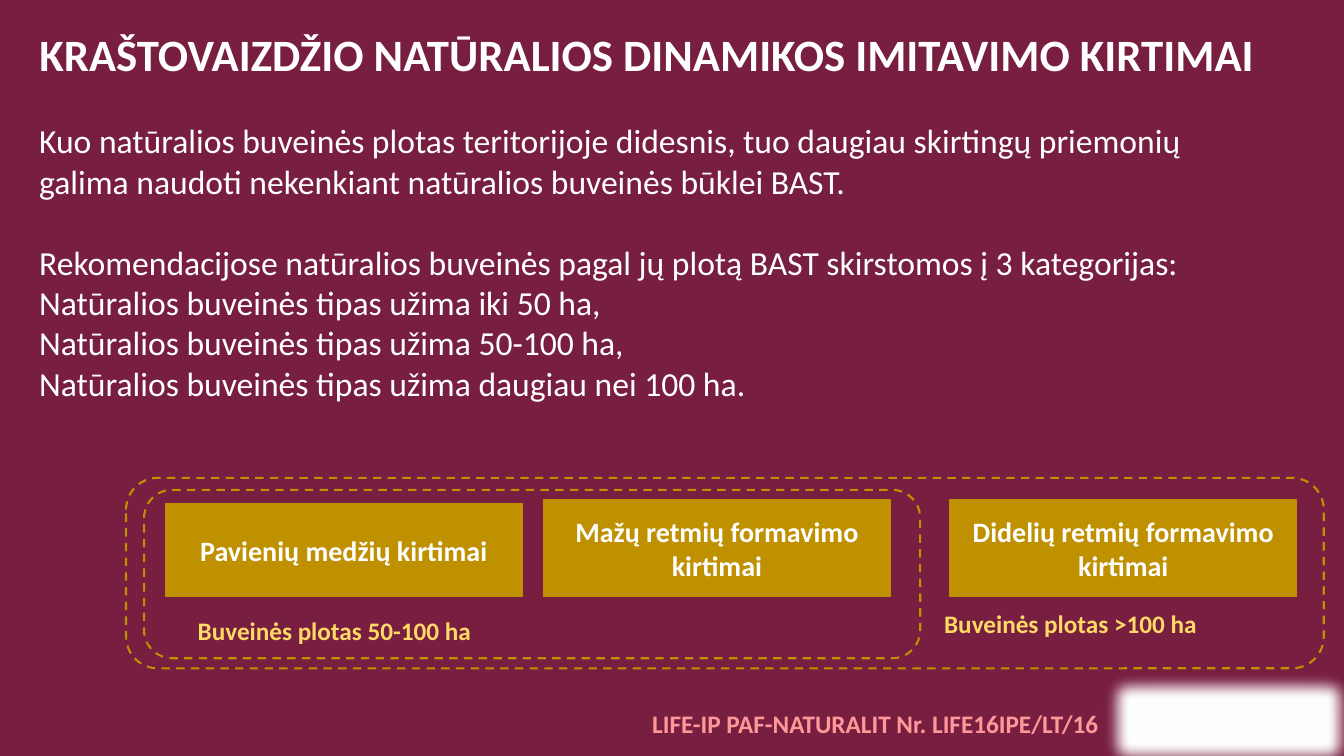
from collections import namedtuple

from lxml import etree
from pptx import Presentation
from pptx.dml.color import RGBColor
from pptx.enum.dml import MSO_LINE
from pptx.enum.shapes import MSO_SHAPE
from pptx.enum.text import MSO_ANCHOR, PP_ALIGN
from pptx.oxml.ns import qn
from pptx.util import Inches, Pt

RECTANGLE, ROUNDED = MSO_SHAPE.RECTANGLE, MSO_SHAPE.ROUNDED_RECTANGLE
MIDDLE = MSO_ANCHOR.MIDDLE
LEFT, CENTER = PP_ALIGN.LEFT, PP_ALIGN.CENTER
DASH = MSO_LINE.DASH

FONT = "Calibri"
WINE, WHITE, GOLD, YELLOW, PINK = "781E40", "FFFFFF", "BF9000", "FFD966", "FF9999"

TITLE = "KRAŠTOVAIZDŽIO NATŪRALIOS DINAMIKOS IMITAVIMO KIRTIMAI"
INTRO = [
    "Kuo natūralios buveinės plotas teritorijoje didesnis, tuo daugiau skirtingų "
    "priemonių galima naudoti nekenkiant natūralios buveinės būklei BAST.",
    "Rekomendacijose natūralios buveinės pagal jų plotą BAST skirstomos į 3 kategorijas:",
    "Natūralios buveinės tipas užima iki 50 ha,",
    "Natūralios buveinės tipas užima 50-100 ha,",
    "Natūralios buveinės tipas užima daugiau nei 100 ha.",
]
FELLINGS = [
    ("Pavienių medžių kirtimai", (3.28, 13.5, 29.8, 49)),
    ("Mažų retmių formavimo kirtimai", (34.85, 11.64, 28.96, 50.8)),
    ("Didelių retmių formavimo kirtimai", (68.77, 11.64, 28.96, 50.8)),
]
PROJECT = "LIFE-IP PAF-NATURALIT Nr. LIFE16IPE/LT/16"

Box = namedtuple("Box", "left top width height")


def colour(value):
    """Turn a hex string into a colour."""
    return RGBColor.from_string(value)


def part(box, left, top, width, height):
    """Return the area given in percent of a box."""
    return Box(
        round(box.left + box.width * left / 100),
        round(box.top + box.height * top / 100),
        round(box.width * width / 100),
        round(box.height * height / 100),
    )


def write(frame, lines, size, tint, bold=False, align=LEFT):
    """Fill a text frame with evenly formatted paragraphs."""
    frame.text = "\n".join(lines)
    frame.vertical_anchor = MIDDLE
    for para in frame.paragraphs:
        para.alignment = align
        for span in para.runs:
            span.font.name, span.font.size, span.font.bold = FONT, Pt(size), bold
            span.font.color.rgb = colour(tint)


def add_panel(page, kind, box, fill=None, line=None, weight=1):
    """Add a flat shape with an optional fill and outline."""
    panel = page.shapes.add_shape(kind, *box)
    panel.shadow.inherit = False
    if fill:
        panel.fill.solid()
        panel.fill.fore_color.rgb = colour(fill)
    else:
        panel.fill.background()
    if line:
        panel.line.color.rgb = colour(line)
        panel.line.width = Pt(weight)
    else:
        panel.line.fill.background()
    return panel


def soften(panel, radius):
    """Fade the edges of a shape over a radius in points."""
    effects = panel.element.spPr.find(qn("a:effectLst"))
    etree.SubElement(effects, qn("a:softEdge"), rad=str(Pt(radius)))


def add_label(page, box, text, tint):
    """Add a single bold line of text."""
    label = page.shapes.add_textbox(*box)
    write(label.text_frame, [text], 18, tint, bold=True)


def add_title(page, box):
    """Place and format the title placeholder."""
    title = page.shapes.title
    title.left, title.top, title.width, title.height = box
    write(title.text_frame, [TITLE], 32, WHITE, bold=True)
    title.text_frame.paragraphs[0].line_spacing = 0.9


def add_intro(page, box):
    """Write the explanation and the three area categories."""
    frame = add_panel(page, RECTANGLE, box, fill=WINE).text_frame
    frame.word_wrap = True
    frame.margin_bottom = Inches(0.34)
    write(frame, INTRO, 24, WHITE)
    frame.paragraphs[1].space_before = Pt(29)


def add_area_frame(page, box, caption, caption_area):
    """Draw a dashed frame with its habitat area caption."""
    frame = add_panel(page, ROUNDED, box, line=GOLD, weight=1.5)
    frame.line.dash_style = DASH
    add_label(page, part(box, *caption_area), caption, YELLOW)


def add_diagram(page, box):
    """Draw the nested area frames and the felling types inside them."""
    add_area_frame(page, box, "Buveinės plotas >100 ha", (67.47, 66.1, 27, 21.2))
    inner = part(box, 1.5, 6.35, 64.8, 88.4)
    add_area_frame(page, inner, "Buveinės plotas 50-100 ha", (5.64, 71.6, 42, 24))
    for label, area in FELLINGS:
        felling = add_panel(page, RECTANGLE, part(box, *area), GOLD, GOLD)
        felling.text_frame.word_wrap = True
        write(felling.text_frame, [label], 20, WHITE, bold=True, align=CENTER)


def add_footer(page, box):
    """Write the project number beside a plain soft white panel."""
    panel = add_panel(page, RECTANGLE, part(box, 63.11, 0, 36.89, 100), WHITE, WHITE)
    soften(panel, 12.5)
    add_label(page, part(box, 0, 34.23, 65.5, 36), PROJECT, PINK)


def main():
    """Build and save the slide."""
    deck = Presentation()
    deck.slide_width, deck.slide_height = Inches(13.33), Inches(7.5)
    page = deck.slides.add_slide(deck.slide_layouts[5])
    page.background.fill.solid()
    page.background.fill.fore_color.rgb = colour(WINE)
    whole = Box(0, 0, deck.slide_width, deck.slide_height)
    add_footer(page, part(whole, 47.79, 88, 53.49, 14.8))
    add_title(page, part(whole, 2.18, 0.8, 94.6, 13.47))
    add_intro(page, part(whole, 2.18, 10.8, 91.67, 51.47))
    add_diagram(page, part(whole, 9.38, 63.2, 89.12, 25.2))
    deck.save("out.pptx")


if __name__ == "__main__":
    main()
